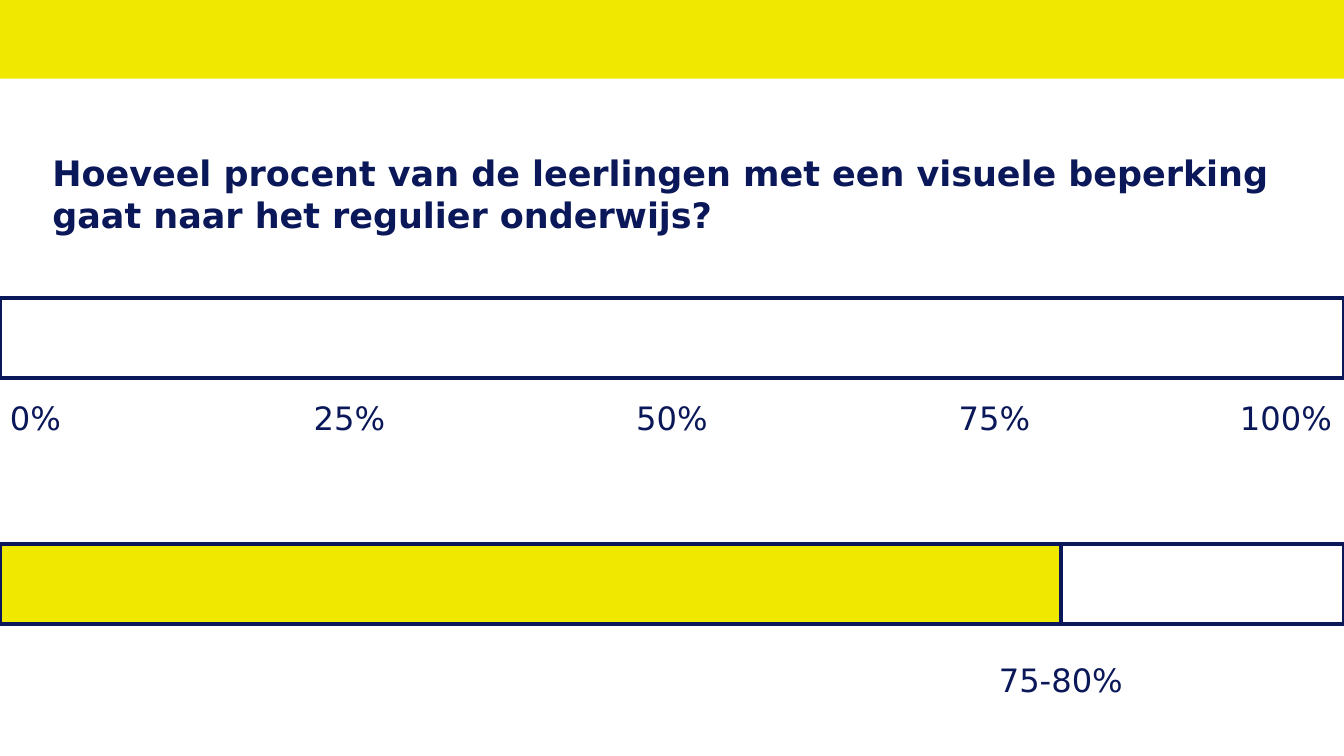
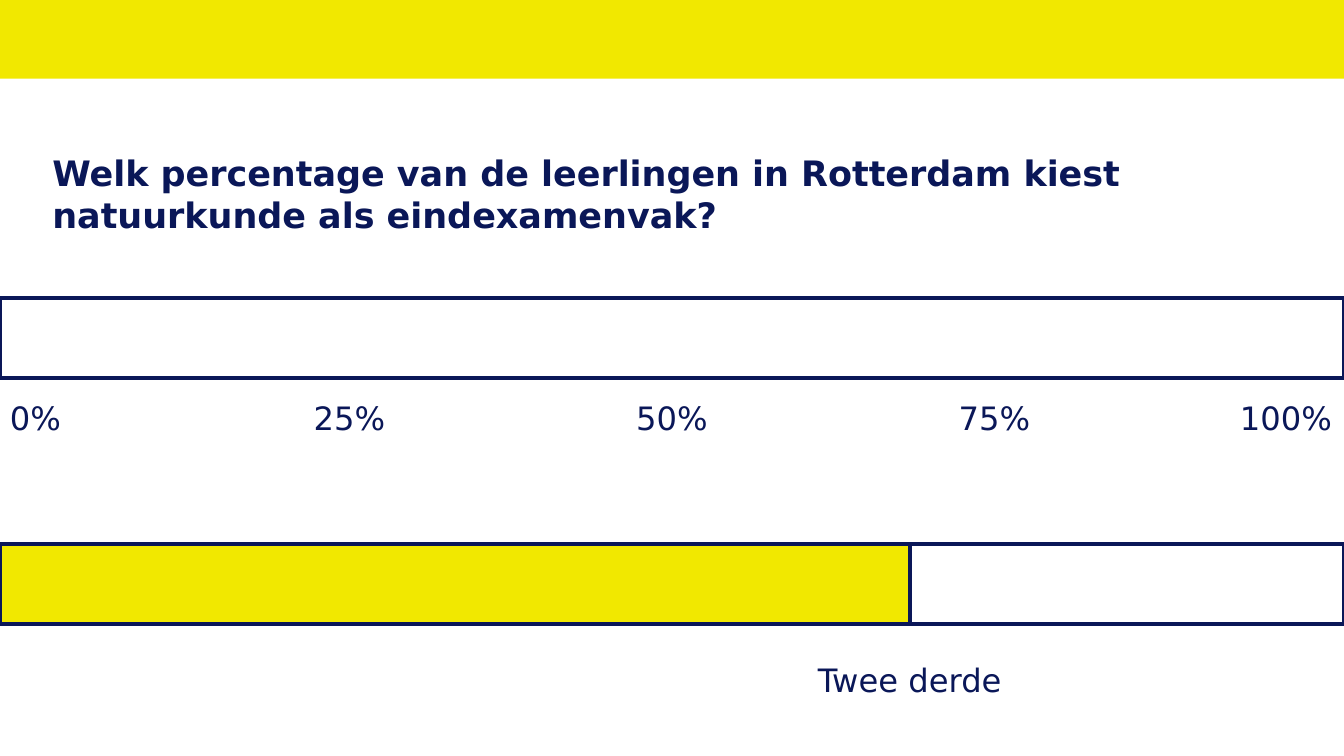
from pptx import Presentation
from pptx.dml.color import RGBColor
from pptx.enum import shapes, text
from pptx.util import Inches, Pt

YELLOW = RGBColor(0xF1, 0xE8, 0x00)
NAVY = RGBColor(0x0A, 0x17, 0x58)
FONT = "DejaVu Sans"
WIDTH, HEIGHT = Inches(13.34), Inches(7.5)
TITLE_ONLY = 5

TITLE_FONT = {"name": FONT, "size": Pt(25), "bold": True}
LABEL_FONT = {"name": FONT, "size": Pt(23)}
TITLE_FRAME = {
    "margin_left": 0, "margin_right": 0, "margin_top": 0, "margin_bottom": 0,
    "vertical_anchor": text.MSO_ANCHOR.TOP,
    "auto_size": text.MSO_AUTO_SIZE.NONE, "word_wrap": True,
}

LEFT, CENTER, RIGHT = text.PP_ALIGN.LEFT, text.PP_ALIGN.CENTER, text.PP_ALIGN.RIGHT
BAR_HEIGHT = 10.53
QUESTION_BAR_TOP, ANSWER_BAR_TOP = 39.47, 72
SCALE_TOP, ANSWER_TOP = 51.07, 85.73
LABEL_WIDTH, LABEL_HEIGHT = 18, 6.8
SCALE = [("0%", 0, LEFT), ("25%", 26, CENTER), ("50%", 50, CENTER),
         ("75%", 74, CENTER), ("100%", 99.85, RIGHT)]
ANCHOR_SHARE = {LEFT: 0, CENTER: 0.5, RIGHT: 1}

QUESTIONS = [
    ("Hoeveel procent van de leerlingen met een visuele beperking "
     "gaat naar het regulier onderwijs?", 78.94, "75-80%"),
    ("Welk percentage van de leerlingen in Rotterdam kiest "
     "natuurkunde als eindexamenvak?", 67.7, "Twee derde"),
]


def area(left, top, width, height):
    return (int(WIDTH * left / 100), int(HEIGHT * top / 100),
            int(WIDTH * width / 100), int(HEIGHT * height / 100))


def set_attributes(target, values):
    for name, value in values.items():
        setattr(target, name, value)


def write(frame, words, font, line_spacing, alignment=LEFT):
    frame.text = words
    paragraph = frame.paragraphs[0]
    set_attributes(paragraph, {"alignment": alignment, "line_spacing": line_spacing})
    set_attributes(paragraph.font, font)
    paragraph.font.color.rgb = NAVY


def add_bar(slide, top, share=100, height=BAR_HEIGHT, fill=None, outlined=True):
    bar = slide.shapes.add_shape(shapes.MSO_SHAPE.RECTANGLE,
                                 *area(0, top, share, height))
    bar.shadow.inherit = False
    if fill is None:
        bar.fill.background()
    else:
        bar.fill.solid()
        bar.fill.fore_color.rgb = fill
    if outlined:
        bar.line.color.rgb = NAVY
        bar.line.width = Pt(3)
    else:
        bar.line.fill.background()
    return bar


def add_label(slide, words, position, top, alignment=CENTER):
    left = position - LABEL_WIDTH * ANCHOR_SHARE[alignment]
    box = slide.shapes.add_textbox(*area(left, top, LABEL_WIDTH, LABEL_HEIGHT))
    box.text_frame.word_wrap = True
    write(box.text_frame, words, LABEL_FONT, Pt(32.8), alignment)


def prepare_layout(presentation):
    layout = presentation.slide_layouts[TITLE_ONLY]
    title = layout.placeholders[0]
    left, top, width, height = area(3.9, 20, 92.05, 8)
    set_attributes(title, {"left": left, "top": top, "width": width, "height": height})
    set_attributes(title.text_frame, TITLE_FRAME)
    return layout


def move_band_to_layout(slide, layout):
    band = add_bar(slide, 0, height=10.4, fill=YELLOW, outlined=False)
    layout.shapes.element.insert(2, band.element)


def add_question(presentation, layout, question, share, answer):
    slide = presentation.slides.add_slide(layout)
    title = slide.shapes.title.text_frame
    set_attributes(title, TITLE_FRAME)
    write(title, question, TITLE_FONT, Pt(30))
    add_bar(slide, QUESTION_BAR_TOP)
    for words, position, alignment in SCALE:
        add_label(slide, words, position, SCALE_TOP, alignment)
    add_bar(slide, ANSWER_BAR_TOP)
    add_bar(slide, ANSWER_BAR_TOP, share, fill=YELLOW)
    add_label(slide, answer, share, ANSWER_TOP)
    return slide


def main():
    presentation = Presentation()
    set_attributes(presentation, {"slide_width": WIDTH, "slide_height": HEIGHT})
    layout = prepare_layout(presentation)
    slides = [add_question(presentation, layout, *question) for question in QUESTIONS]
    move_band_to_layout(slides[0], layout)
    presentation.save("out.pptx")


if __name__ == "__main__":
    main()
